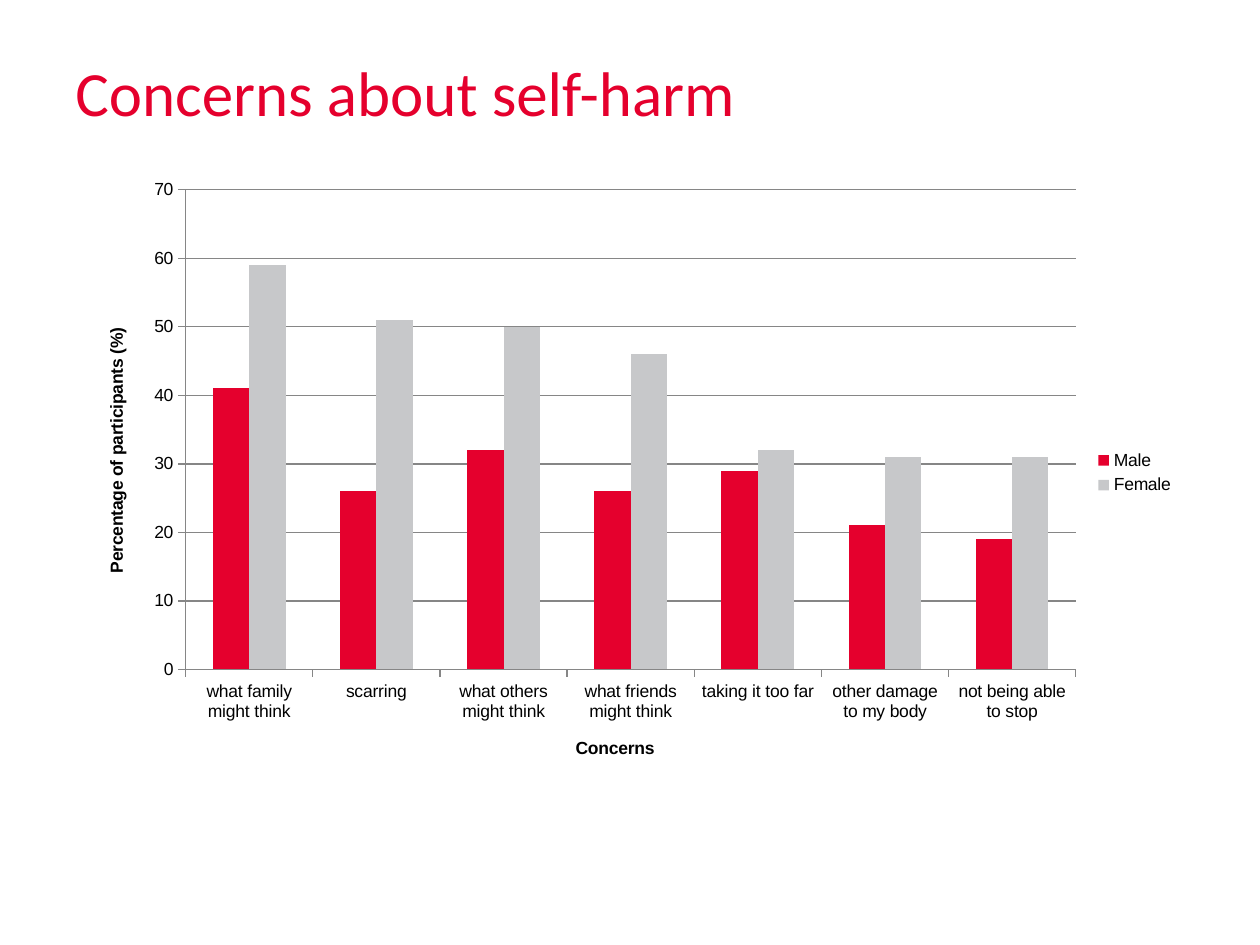
"""Build a slide charting young people's concerns about self-harm."""
from lxml import etree
from pptx import Presentation
from pptx import util as u
from pptx.chart import data as chart_data
from pptx.dml import color
from pptx.enum import chart as kinds, text
from pptx.oxml import ns

TITLE = "Concerns about self-harm"
CONCERNS = [
    "what family might think",
    "scarring",
    "what others might think",
    "what friends might think",
    "taking it too far",
    "other damage to my body",
    "not being able to stop",
]
SHARES = {
    "Male": [41, 26, 32, 26, 29, 21, 19],
    "Female": [59, 51, 50, 46, 32, 31, 31],
}
COLOURS = {"Male": "E5002D", "Female": "C7C8CA", "title": "E5002D",
           "text": "000000", "line": "868686"}
PLOT_AREA = {"x": 0.1, "y": 0.04, "w": 0.8, "h": 0.78}


def rgb(name):
    """Return the named colour."""
    return color.RGBColor.from_string(COLOURS[name])


def style(font, size, colour, face, bold=False):
    """Set the look of a font."""
    font.size, font.name, font.bold = u.Pt(size), face, bold
    font.color.rgb = rgb(colour)


def add_title(page):
    """Write the slide title."""
    box = page.shapes.add_textbox(u.Cm(1.27), u.Cm(0.76), u.Cm(22.86), u.Cm(2.16))
    frame = box.text_frame
    frame.word_wrap = True
    frame.vertical_anchor = text.MSO_ANCHOR.MIDDLE
    span = frame.paragraphs[0].add_run()
    span.text = TITLE
    style(span.font, 36, "title", "Calibri")


def style_axis(axis, title):
    """Title an axis and give it outside ticks and a thin grey line."""
    span = axis.axis_title.text_frame.paragraphs[0].add_run()
    span.text = title
    style(span.font, 10, "text", "Arial", bold=True)
    axis.major_tick_mark = kinds.XL_TICK_MARK.OUTSIDE
    axis.format.line.color.rgb = rgb("line")
    axis.format.line.width = u.Pt(0.75)


def place_plot(chart):
    """Fix the inner plot area as fractions of the chart."""
    plot_area = chart.plots[0]._element.getparent()
    layout = plot_area.find(ns.qn("c:layout"))
    if layout is None:
        layout = etree.Element(ns.qn("c:layout"))
        plot_area.insert(0, layout)
    manual = etree.SubElement(layout, ns.qn("c:manualLayout"))
    settings = {"layoutTarget": "inner", "xMode": "edge", "yMode": "edge", **PLOT_AREA}
    for tag, value in settings.items():
        etree.SubElement(manual, ns.qn(f"c:{tag}")).set("val", str(value))


def add_chart(page):
    """Draw the clustered columns."""
    data = chart_data.CategoryChartData(number_format="0")
    data.categories = CONCERNS
    for name, values in SHARES.items():
        data.add_series(name, values)
    chart = page.shapes.add_chart(
        kinds.XL_CHART_TYPE.COLUMN_CLUSTERED,
        u.Cm(1.5), u.Cm(3.33), u.Cm(22.43), u.Cm(12.4), data).chart
    style(chart.font, 10, "text", "Arial")
    chart.has_title = False
    chart.has_legend = True
    chart.legend.position = kinds.XL_LEGEND_POSITION.RIGHT
    chart.legend.include_in_layout = False

    plot = chart.plots[0]
    plot.gap_width, plot.overlap, plot.vary_by_categories = 150, 0, False
    for series in plot.series:
        series.format.fill.solid()
        series.format.fill.fore_color.rgb = rgb(series.name)

    style_axis(chart.category_axis, "Concerns")
    scale = chart.value_axis
    style_axis(scale, "Percentage of participants (%)")
    scale.minimum_scale, scale.maximum_scale, scale.major_unit = 0, 70, 10
    scale.tick_labels.number_format = "0"
    scale.tick_labels.number_format_is_linked = False
    scale.has_major_gridlines = True
    scale.major_gridlines.format.line.color.rgb = rgb("line")
    scale.major_gridlines.format.line.width = u.Pt(0.75)
    place_plot(chart)


def main():
    """Assemble and save the deck."""
    deck = Presentation()
    deck.slide_width, deck.slide_height = u.Cm(25.4), u.Cm(19.05)
    page = deck.slides.add_slide(deck.slide_layouts[6])
    add_title(page)
    add_chart(page)
    deck.save("out.pptx")


if __name__ == "__main__":
    main()
